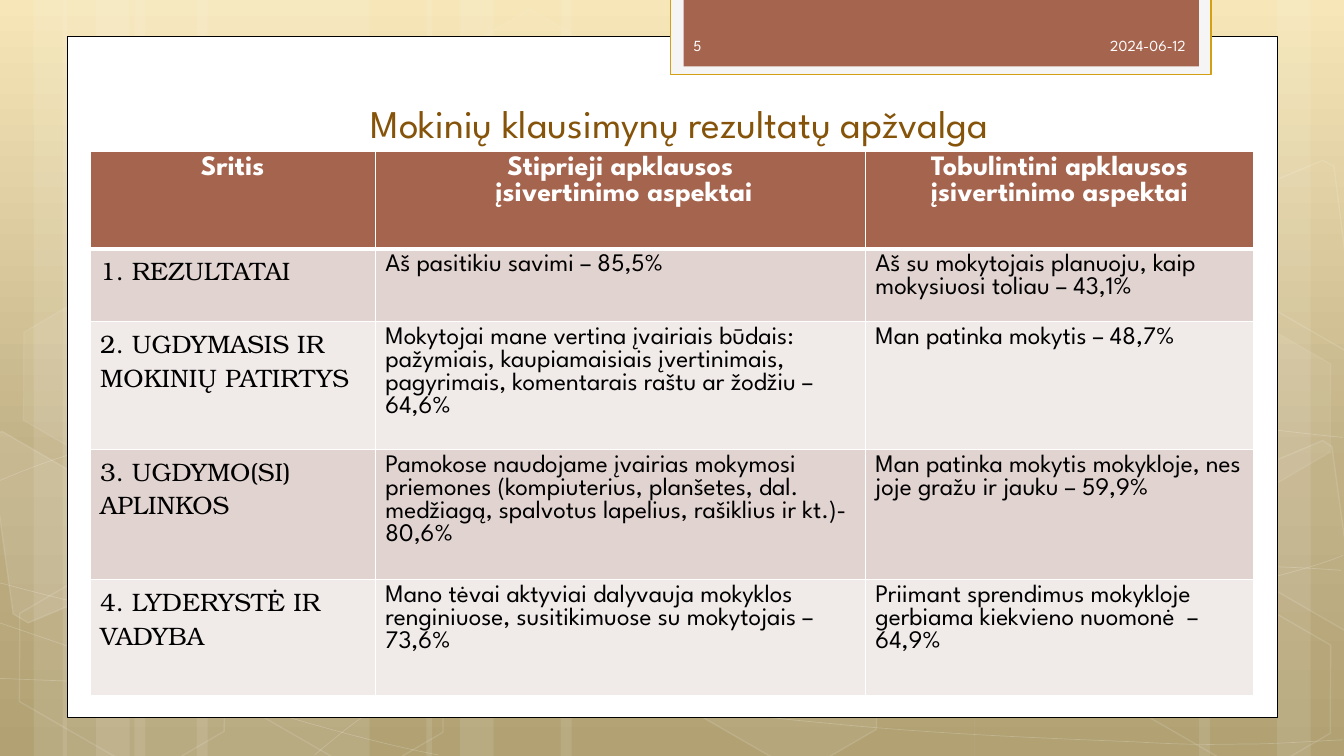
from copy import deepcopy

from lxml.etree import SubElement
from pptx import Presentation
from pptx.dml.color import RGBColor
from pptx.enum.shapes import MSO_SHAPE as Preset
from pptx.enum.text import MSO_ANCHOR as Anchor, MSO_AUTO_SIZE as AutoSize, PP_ALIGN as Align
from pptx.oxml import parse_xml
from pptx.oxml.ns import nsdecls, qn
from pptx.util import Inches, Pt

SANS, SERIF = "League Spartan", "TeX Gyre Bonum"
WHITE, BRICK, PALE = "FFFFFF", "A5644E", "FEFEFE"
GRID = Inches(1) / 3


def paint(fill, color, opacity=100):
    if not opacity:
        fill.background()
        return
    fill.solid()
    fill.fore_color.rgb = RGBColor.from_string(color)
    if opacity < 100:
        tint = fill._xPr.find(qn("a:solidFill"))[0]
        SubElement(tint, qn("a:alpha")).set("val", str(opacity * 1000))


def write(frame, text, size=18, font=SANS, color="000000", bold=False,
          align=Align.LEFT, anchor=Anchor.TOP):
    frame.word_wrap = True
    frame.vertical_anchor = anchor
    frame.text = text
    for paragraph in frame.paragraphs:
        paragraph.alignment = align
        for run in paragraph.runs:
            run.font.size, run.font.name, run.font.bold = Pt(size), font, bold
            paint(run.font.fill, color)


deck = Presentation()
deck.slide_width, deck.slide_height = Inches(13.33), Inches(7.5)
slide = deck.slides.add_slide(deck.slide_layouts[5])
shapes = slide.shapes

backdrop = slide.background.fill
backdrop.gradient()
backdrop.gradient_angle = 270
stop_list = slide.element.find(".//" + qn("a:gsLst"))
stop_list.append(deepcopy(stop_list[-1]))
for stop, (position, color) in zip(backdrop.gradient_stops,
                                   [(0, "F6E4B0"), (0.62, "BAA878"), (1, "A99764")]):
    stop.position = position
    stop.color.rgb = RGBColor.from_string(color)

decor = []

bands = [(4, 7), (0, 2), (1, 3.33), (5.85, 7), (1.86, 2), (2.85, 3.33),
         (29, 7), (38, 2), (35.67, 3.33), (16.68, 12.33), (12.69, 2), (13.68, 3.33)]
for left, width in bands:
    band = shapes.add_shape(Preset.RECTANGLE, int(left * GRID), 0,
                            int(width * GRID), deck.slide_height)
    decor.append((band, WHITE, 10, WHITE, 0, 1))

waves = [
    [(-0.03, 20.19), (2.13, 20.28), (4.29, 20.37), (7.29, 20.34), (10.29, 20.31),
     (13.98, 20.25), (17.97, 19.95), (21.99, 19.65), (27.66, 19.08), (31.35, 18.51),
     (35.01, 17.94), (38.76, 17.04), (39.96, 16.53)],
    [(-0.03, 14.31), (1.11, 13.83), (2.25, 13.38), (4.53, 12.93), (6.81, 12.48),
     (10.02, 11.82), (13.56, 11.61), (17.13, 11.4), (21.42, 11.37), (25.83, 11.61),
     (30.24, 11.85), (37.56, 12.78), (39.96, 13.02)],
    [(-0.09, 18.51), (4.74, 20.16), (9.57, 21.81), (13.05, 22.47)],
    [(-0.03, 17.34), (1.2, 17.67), (2.46, 18), (4.8, 18.48), (7.11, 18.93),
     (10.59, 19.68), (13.92, 20.19), (17.28, 20.7), (21.48, 21.24), (24.78, 21.54),
     (28.11, 21.87), (31.65, 21.99), (33.78, 22.08), (35.88, 22.2), (36.42, 22.14),
     (37.47, 22.14), (38.49, 22.11), (39.24, 22.05), (39.96, 22.02)],
    [(9.36, 22.47), (10.08, 21.87), (10.77, 21.27), (11.76, 20.73), (12.72, 20.19),
     (14.07, 19.59), (15.18, 19.17), (16.29, 18.75), (16.98, 18.57), (18.45, 18.27),
     (19.92, 17.97), (22.62, 17.55), (24, 17.34), (25.41, 17.13), (25.62, 17.13),
     (26.88, 17.07), (28.11, 16.98), (30.06, 16.89), (31.44, 16.86), (32.82, 16.83),
     (35.13, 16.86), (35.13, 16.86), (36, 16.86), (36.9, 16.86), (37.77, 16.86),
     (38.52, 16.89), (39.18, 16.92), (39.54, 16.95), (39.9, 16.98), (39.78, 16.95),
     (39.9, 16.98)],
]
facets = [
    ([(-0.33, 13.02), (0.06, 12.84), (3.12, 14.61), (3.48, 17.43), (0.84, 18.54),
      (0.39, 18.27)], 10),
    ([(36.72, 14.22), (39.36, 13.11), (39.63, 13.29), (40.38, 18.75), (40.14, 18.84),
      (37.08, 17.07)], 4),
    ([(36.72, 5.88), (39.36, 4.77), (39.69, 4.95), (40.38, 10.38), (40.14, 10.5),
      (37.08, 8.73)], 0),
]
outlines = [(wave, True, 0, 20, 0.5) for wave in waves]
outlines += [(facet, False, opacity, 12, 1) for facet, opacity in facets]
for track, curved, fill_opacity, line_opacity, weight in outlines:
    points = [(x * GRID, y * GRID) for x, y in track]
    builder = shapes.build_freeform(*points[0])
    builder.add_line_segments(points[1:], close=not curved)
    outline = builder.convert_to_shape()
    if curved:
        route = outline.element.find(".//" + qn("a:path"))
        legs = route.findall(qn("a:lnTo"))
        for first in range(0, len(legs), 3):
            bend = SubElement(route, qn("a:cubicBezTo"))
            for leg in legs[first:first + 3]:
                bend.append(leg[0])
                route.remove(leg)
    decor.append((outline, WHITE, fill_opacity, WHITE, line_opacity, weight))

hexagons = [(13.02, 1.08, 4, 8), (19.53, 17.67, 6, 12), (0.12, 17.73, 0, 12),
            (0.24, 9.36, 7, 8), (6.63, 17.76, 0, 12), (33.03, 17.79, 0, 12),
            (33.03, 9.42, 7, 8)]
for left, top, fill_opacity, line_opacity in hexagons:
    hexagon = shapes.add_shape(Preset.HEXAGON, int(left * GRID), int(top * GRID),
                               int(7.02 * GRID), int(4.56 * GRID))
    hexagon.adjustments[0] = 0.285
    hexagon.rotation = 30
    decor.append((hexagon, WHITE, fill_opacity, WHITE, line_opacity, 1))

panels = [(2, 1.08, 36, 20.28, WHITE, "000000", 100, 0.5),
          (19.95, -0.06, 16.08, 2.28, "F5F5F5", "D2A010", 100, 1),
          (20.34, -0.06, 15.33, 2.04, BRICK, BRICK, 0, 1)]
for left, top, width, height, color, edge, edge_opacity, weight in panels:
    panel = shapes.add_shape(Preset.RECTANGLE, int(left * GRID), int(top * GRID),
                             int(width * GRID), int(height * GRID))
    decor.append((panel, color, 100, edge, edge_opacity, weight))

for piece, color, fill_opacity, edge, line_opacity, weight in decor:
    piece.shadow.inherit = False
    paint(piece.fill, color, fill_opacity)
    piece.line.width = Pt(weight)
    paint(piece.line.fill, edge, line_opacity)

heading = shapes.title
shapes.element.append(heading.element)
heading.left, heading.top = int(5.16 * GRID), int(3.36 * GRID)
heading.width, heading.height = int(30.12 * GRID), int(1.14 * GRID)
write(heading.text_frame, "Mokinių klausimynų rezultatų apžvalga", size=28,
      color="85540A", align=Align.CENTER, anchor=Anchor.BOTTOM)
heading.text_frame.auto_size = AutoSize.NONE

survey = [
    ("Sritis", "Stiprieji apklausos\n įsivertinimo aspektai",
     "Tobulintini apklausos įsivertinimo aspektai"),
    ("1. REZULTATAI", "Aš pasitikiu savimi – 85,5%",
     "Aš su mokytojais planuoju, kaip mokysiuosi toliau – 43,1%"),
    ("2. UGDYMASIS IR MOKINIŲ PATIRTYS",
     "Mokytojai mane vertina įvairiais būdais: pažymiais, kaupiamaisiais įvertinimais, "
     "pagyrimais, komentarais raštu ar žodžiu – 64,6%",
     "Man patinka mokytis – 48,7%"),
    ("3. UGDYMO(SI) APLINKOS",
     "Pamokose naudojame įvairias mokymosi priemones (kompiuterius, planšetes, dal. "
     "medžiagą, spalvotus lapelius, rašiklius ir kt.)- 80,6%",
     "Man patinka mokytis mokykloje, nes joje gražu ir jauku – 59,9%"),
    ("4. LYDERYSTĖ IR VADYBA",
     "Mano tėvai aktyviai dalyvauja mokyklos renginiuose, susitikimuose su mokytojais – 73,6%",
     "Priimant sprendimus mokykloje gerbiama kiekvieno nuomonė  – 64,9%"),
]
columns, rows = (8.49, 14.58, 11.55), (2.91, 2.16, 3.81, 3.87, 3.45)
results = shapes.add_table(len(rows), len(columns), int(2.68 * GRID), int(4.5 * GRID),
                           int(sum(columns) * GRID), int(sum(rows) * GRID)).table
for column, width in zip(results.columns, columns):
    column.width = int(width * GRID)
for number, (row, height, texts) in enumerate(zip(results.rows, rows, survey)):
    row.height = int(height * GRID)
    for place, (cell, text) in enumerate(zip(row.cells, texts)):
        if number == 0:
            paint(cell.fill, BRICK)
            write(cell.text_frame, text, size=20, color=WHITE, bold=True, align=Align.CENTER)
            for order, (side, weight) in enumerate([("L", 1), ("R", 1), ("T", 1), ("B", 3)]):
                cell.fill._xPr.insert(order, parse_xml(
                    f'<a:ln{side} {nsdecls("a")} w="{Pt(weight)}"><a:solidFill>'
                    f'<a:srgbClr val="{WHITE}"/></a:solidFill></a:ln{side}>'))
        else:
            paint(cell.fill, "E1D3D0" if number % 2 else "F0EAE9")
            write(cell.text_frame, text, font=SANS if place else SERIF)

for text, left, width, align in [("2024-06-12", 26.25, 9.33, Align.RIGHT),
                                 ("5", 20.34, 5.82, Align.LEFT)]:
    label = shapes.add_textbox(int(left * GRID), int(0.74 * GRID),
                               int(width * GRID), int(1.2 * GRID))
    write(label.text_frame, text, size=11, color=PALE, align=align, anchor=Anchor.MIDDLE)

deck.save("out.pptx")
